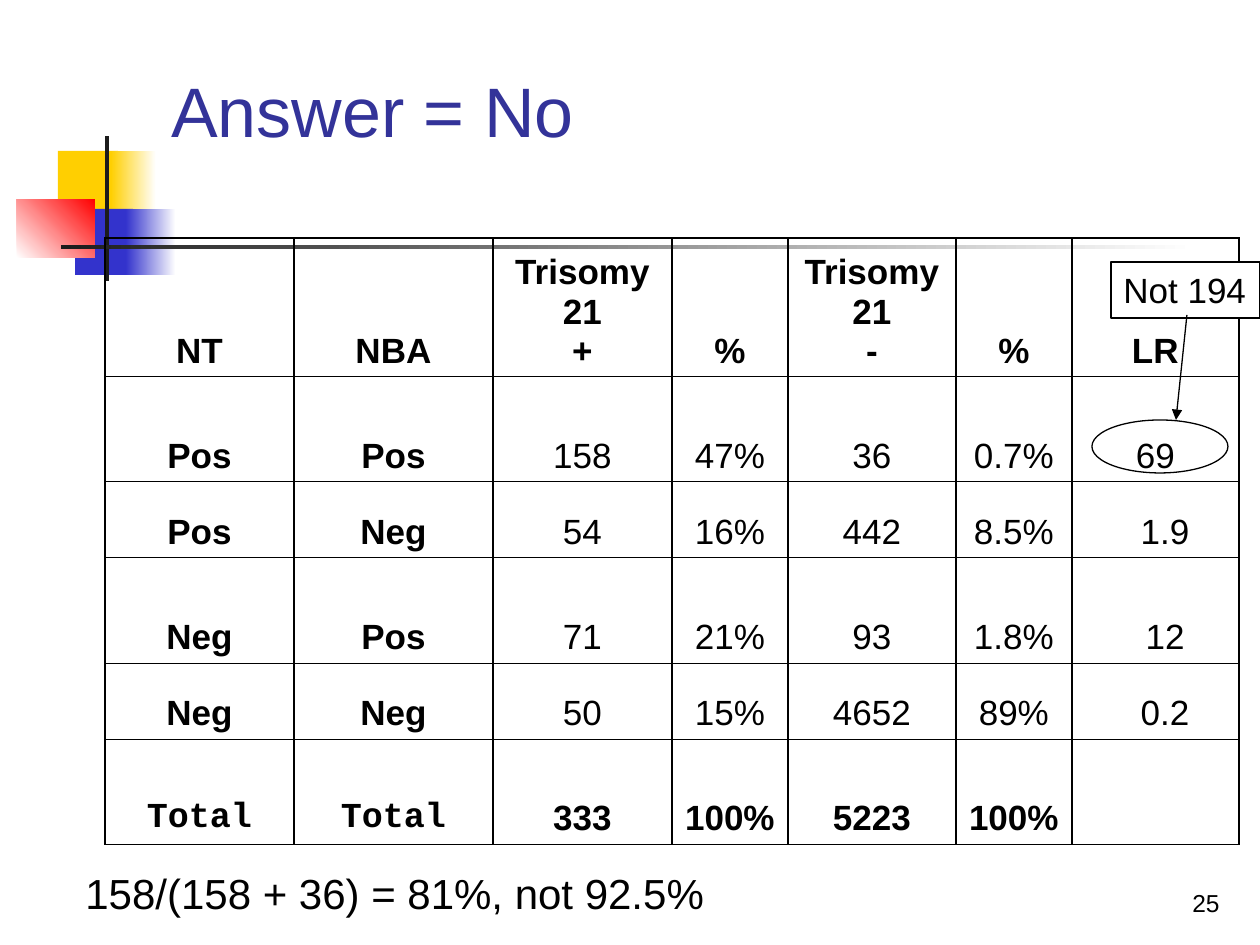
"""Build a slide with a table of likelihood ratios for two trisomy 21 markers."""
import lxml.etree
import pptx
import pptx.dml.color
import pptx.enum.shapes
import pptx.enum.text
import pptx.oxml
import pptx.oxml.ns
import pptx.util

PX = 914400 // 126
BLACK = pptx.dml.color.RGBColor(0, 0, 0)
WHITE = pptx.dml.color.RGBColor(255, 255, 255)
CHARCOAL = pptx.dml.color.RGBColor(0x1C, 0x1C, 0x1C)
YELLOW = pptx.dml.color.RGBColor(0xFF, 0xCF, 0x01)
BLUE = pptx.dml.color.RGBColor(0x33, 0x33, 0xCC)
RED = pptx.dml.color.RGBColor(255, 0, 0)
TITLE_BLUE = pptx.dml.color.RGBColor(0x33, 0x33, 0x99)
SHAPE = pptx.enum.shapes.MSO_SHAPE
ALIGN = pptx.enum.text.PP_ALIGN
ANCHOR = pptx.enum.text.MSO_ANCHOR
qn = pptx.oxml.ns.qn


def write(frame, text, size, color=BLACK, align=ALIGN.LEFT, bold=False, font="Arial"):
    for index, line in enumerate(text.split("\n")):
        paragraph = frame.add_paragraph() if index else frame.paragraphs[0]
        paragraph.alignment = align
        run = paragraph.add_run()
        run.text = line
        run.font.size = pptx.util.Pt(size)
        run.font.name = font
        run.font.bold = bold
        run.font.color.rgb = color


def add_shape(kind, box, fill=None, line=None):
    shape = slide.shapes.add_shape(kind, *[value * PX for value in box])
    shape.shadow.inherit = False
    if fill is None:
        shape.fill.background()
    else:
        shape.fill.solid()
        shape.fill.fore_color.rgb = fill
    if line is None:
        shape.line.fill.background()
    else:
        shape.line.color.rgb = line
        shape.line.width = pptx.util.Pt(0.75)
    return shape


presentation = pptx.Presentation()
presentation.slide_width = 1260 * PX
presentation.slide_height = 945 * PX
slide = presentation.slides.add_slide(presentation.slide_layouts[6])

decorations = [
    ((58, 151, 60, 66), YELLOW, None, 0),
    ((111, 151, 45, 66), YELLOW, WHITE, 0),
    ((75, 209, 58, 66), BLUE, None, 0),
    ((126, 209, 50, 66), BLUE, WHITE, 0),
    ((17, 199, 78, 59), WHITE, RED, 45),
    ((105, 136, 4, 145), CHARCOAL, None, 0),
    ((61, 245, 1134, 4), CHARCOAL, WHITE, 0),
]
for box, start, end, angle in decorations:
    shape = add_shape(SHAPE.RECTANGLE, box, start)
    if end is not None:
        shape.fill.gradient()
        shape.fill.gradient_angle = angle
        for stop, color, position in zip(shape.fill.gradient_stops, (start, end), (0, 1)):
            stop.color.rgb = color
            stop.position = position

texts = [
    ((159, 29, 1074, 129), "Answer = No", 40, TITLE_BLUE, ALIGN.LEFT, ANCHOR.BOTTOM),
    ((73, 861, 1134, 63), "158/(158 + 36) = 81%, not 92.5%", 24, BLACK, ALIGN.LEFT, ANCHOR.TOP),
    ((970, 861, 262, 63), "25", 14, BLACK, ALIGN.RIGHT, ANCHOR.BOTTOM),
]
for box, text, size, color, align, anchor in texts:
    frame = slide.shapes.add_textbox(*[value * PX for value in box]).text_frame
    frame.word_wrap = True
    frame.vertical_anchor = anchor
    write(frame, text, size, color, align)
    if anchor == ANCHOR.TOP:
        frame.paragraphs[0].space_before = pptx.util.Pt(3)

rows = [
    ["NT", "NBA", "Trisomy 21\n+", "%", "Trisomy 21\n-", "%", "LR"],
    ["Pos", "Pos", "158", "47%", "36", "0.7%", "69"],
    ["Pos", "Neg", "54", "16%", "442", "8.5%", "1.9"],
    ["Neg", "Pos", "71", "21%", "93", "1.8%", "12"],
    ["Neg", "Neg", "50", "15%", "4652", "89%", "0.2"],
    ["Total", "Total", "333", "100%", "5223", "100%", ""],
]
column_widths = [189, 199, 179, 116, 168, 116, 167]
row_heights = [135, 105, 76, 106, 76, 105]
table = slide.shapes.add_table(
    len(rows), len(column_widths), 105 * PX, 238 * PX,
    sum(column_widths) * PX, sum(row_heights) * PX).table
table.first_row = False
table.horz_banding = False
for column, width in zip(table.columns, column_widths):
    column.width = width * PX
for row, height in zip(table.rows, row_heights):
    row.height = height * PX

last_row, last_column = len(rows) - 1, len(column_widths) - 1
for row_index, values in enumerate(rows):
    for column_index, text in enumerate(values):
        cell = table.cell(row_index, column_index)
        cell.vertical_anchor = ANCHOR.BOTTOM
        if column_index == last_column and row_index > 1:
            cell.margin_left = 32 * PX
        if text:
            bold = row_index in (0, last_row) or column_index < 2
            font = "Courier New" if text == "Total" else "Arial"
            write(cell.text_frame, text, 20, BLACK, ALIGN.CENTER, bold, font)
        properties = cell._tc.get_or_add_tcPr()
        for side in ("a:lnL", "a:lnR", "a:lnT", "a:lnB"):
            border = lxml.etree.SubElement(properties, qn(side), w="12700")
            border_fill = lxml.etree.SubElement(border, qn("a:solidFill"))
            lxml.etree.SubElement(border_fill, qn("a:srgbClr"), val=str(BLACK))
        cell.fill.background()

add_shape(SHAPE.OVAL, (1092, 420, 136, 53), line=BLACK)
callout = add_shape(SHAPE.RECTANGLE, (1111, 262, 149, 56), WHITE, BLACK)
callout.text_frame.word_wrap = False
callout.text_frame.vertical_anchor = ANCHOR.TOP
write(callout.text_frame, "Not 194", 20)

arrow = slide.shapes.add_connector(
    pptx.enum.shapes.MSO_CONNECTOR.STRAIGHT, 1187 * PX, 315 * PX, 1176 * PX, 420 * PX)
arrow.line.color.rgb = BLACK
arrow.line.width = pptx.util.Pt(0.75)
lxml.etree.SubElement(arrow.line._get_or_add_ln(), qn("a:tailEnd"), type="triangle")
lxml.etree.SubElement(arrow._element.spPr, qn("a:effectLst"))

presentation.save("out.pptx")
